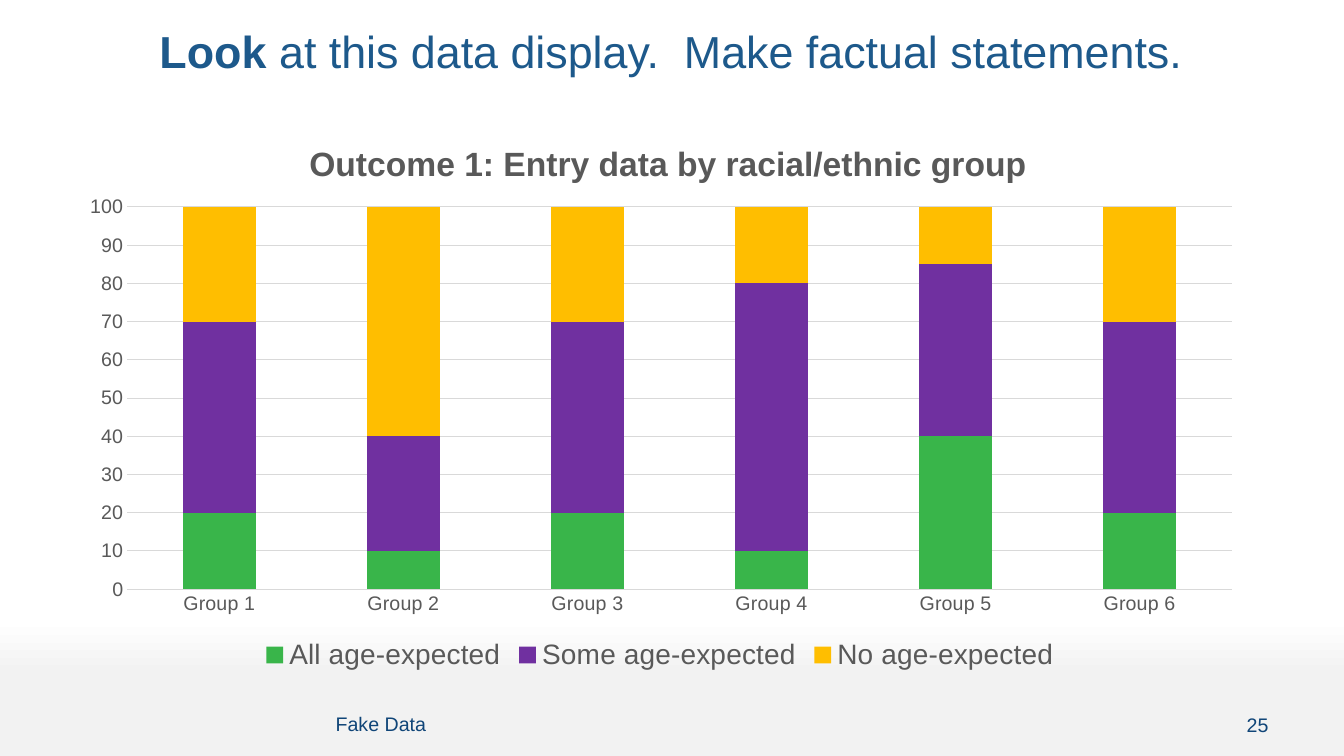
"""Build a slide with a stacked column chart of entry data by group."""
from pptx import Presentation
from pptx.chart.data import CategoryChartData
from pptx.dml.color import RGBColor
from pptx.enum.chart import XL_CHART_TYPE, XL_LEGEND_POSITION, XL_TICK_MARK
from pptx.enum.text import MSO_ANCHOR, PP_ALIGN
from pptx.oxml import parse_xml
from pptx.oxml.ns import nsdecls, qn
from pptx.util import Inches, Pt

STACKED = XL_CHART_TYPE.COLUMN_STACKED
BOTTOM = XL_LEGEND_POSITION.BOTTOM
NO_TICK = XL_TICK_MARK.NONE
TOP, MIDDLE = MSO_ANCHOR.TOP, MSO_ANCHOR.MIDDLE
LEFT, CENTER, RIGHT = PP_ALIGN.LEFT, PP_ALIGN.CENTER, PP_ALIGN.RIGHT

COLORS = {"title": "1D598B", "footer": "104578", "label": "595959", "grid": "D9D9D9",
          "green": "39B54A", "purple": "7030A0", "amber": "FFBE00"}
BACKGROUND = [(0.82, "FFFFFF"), (0.89, "F2F2F2")]
TITLE = [("Look ", True), ("at this data display.  Make factual statements.", False)]
CHART_TITLE = "Outcome 1: Entry data by racial/ethnic group"
GROUPS = [f"Group {number}" for number in range(1, 7)]
SERIES = [
    ("All age-expected", "green", (20, 10, 20, 10, 40, 20)),
    ("Some age-expected", "purple", (50, 30, 50, 70, 45, 50)),
    ("No age-expected", "amber", (30, 60, 30, 20, 15, 30)),
]
FOOTERS = [
    ("Fake Data", (3.23, 6.91, 8.1, 0.54), LEFT),
    ("25", (11.33, 6.91, 1.35, 0.55), RIGHT),
]
TITLE_AREA = (0.64, 0.25, 12.04, 1)
CHART_AREA = (0.65, 1.1, 11.79, 5.61)
PLOT_SHARE = {"x": 0.052, "y": 0.17, "w": 0.929, "h": 0.676}
HEADING_SHARE = {"x": 0.2, "y": 0.045}


def set_font(font, size, color, bold=False):
    formats = {"name": "Arial", "size": Pt(size), "bold": bold}
    for key, value in formats.items():
        setattr(font, key, value)
    font.color.rgb = RGBColor.from_string(COLORS[color])


def set_line(line, color):
    line.color.rgb = RGBColor.from_string(COLORS[color])
    line.width = Pt(0.75)


def place_part(part, index, shares, inner=False):
    for old in part.findall(qn("c:layout")):
        part.remove(old)
    target = '<c:layoutTarget val="inner"/>' if inner else ""
    modes = "".join(f'<c:{side}Mode val="edge"/>' for side in "xy")
    sizes = "".join(f'<c:{key} val="{share}"/>' for key, share in shares.items())
    part.insert(index, parse_xml(
        f'<c:layout {nsdecls("c")}><c:manualLayout>{target}{modes}{sizes}'
        "</c:manualLayout></c:layout>"))


def paint_background(page):
    fill = page.background.fill
    fill.gradient()
    fill.gradient_angle = 270
    for stop, (position, color) in zip(fill.gradient_stops, BACKGROUND):
        stop.position = position
        stop.color.rgb = RGBColor.from_string(color)


def add_title(page):
    title = page.shapes.title
    for side, length in zip(("left", "top", "width", "height"), TITLE_AREA):
        setattr(title, side, Inches(length))
    title.text_frame.vertical_anchor = TOP
    title.text_frame.word_wrap = True
    para = title.text_frame.paragraphs[0]
    para.alignment = CENTER
    para.line_spacing = 0.9
    for text, bold in TITLE:
        span = para.add_run()
        span.text = text
        set_font(span.font, 32, "title", bold)


def add_entry_chart(page):
    data = CategoryChartData()
    data.categories = GROUPS
    for name, _, values in SERIES:
        data.add_series(name, values)
    chart = page.shapes.add_chart(STACKED, *map(Inches, CHART_AREA), data).chart
    set_font(chart.font, 14, "label")

    heading = chart.chart_title
    para = heading.text_frame.paragraphs[0]
    span = para.add_run()
    span.text = CHART_TITLE
    set_font(span.font, 24, "label", True)
    heading.include_in_layout = False
    place_part(heading._element, 1, HEADING_SHARE)

    chart.has_legend = True
    chart.legend.position = BOTTOM
    chart.legend.include_in_layout = False
    set_font(chart.legend.font, 20, "label")

    plot = chart.plots[0]
    plot.gap_width, plot.overlap, plot.vary_by_categories = 150, 100, False
    for series, (_, color, _) in zip(plot.series, SERIES):
        series.format.fill.solid()
        series.format.fill.fore_color.rgb = RGBColor.from_string(COLORS[color])

    for axis in (chart.category_axis, chart.value_axis):
        axis.major_tick_mark = axis.minor_tick_mark = NO_TICK
        set_font(axis.tick_labels.font, 14, "label")
    set_line(chart.category_axis.format.line, "grid")
    scale = chart.value_axis
    scale.minimum_scale, scale.maximum_scale, scale.major_unit = 0, 100, 10
    scale.format.line.fill.background()
    set_line(scale.major_gridlines.format.line, "grid")
    place_part(chart._chartSpace.chart.plotArea, 0, PLOT_SHARE, inner=True)


def add_footers(page):
    for text, area, alignment in FOOTERS:
        frame = page.shapes.add_textbox(*map(Inches, area)).text_frame
        frame.word_wrap = True
        frame.vertical_anchor = MIDDLE
        para = frame.paragraphs[0]
        para.alignment = alignment
        span = para.add_run()
        span.text = text
        set_font(span.font, 14, "footer")


def main():
    deck = Presentation()
    deck.slide_width, deck.slide_height = Inches(13.33), Inches(7.5)
    page = deck.slides.add_slide(deck.slide_layouts[5])
    paint_background(page)
    add_title(page)
    add_entry_chart(page)
    add_footers(page)
    deck.save("out.pptx")


if __name__ == "__main__":
    main()
